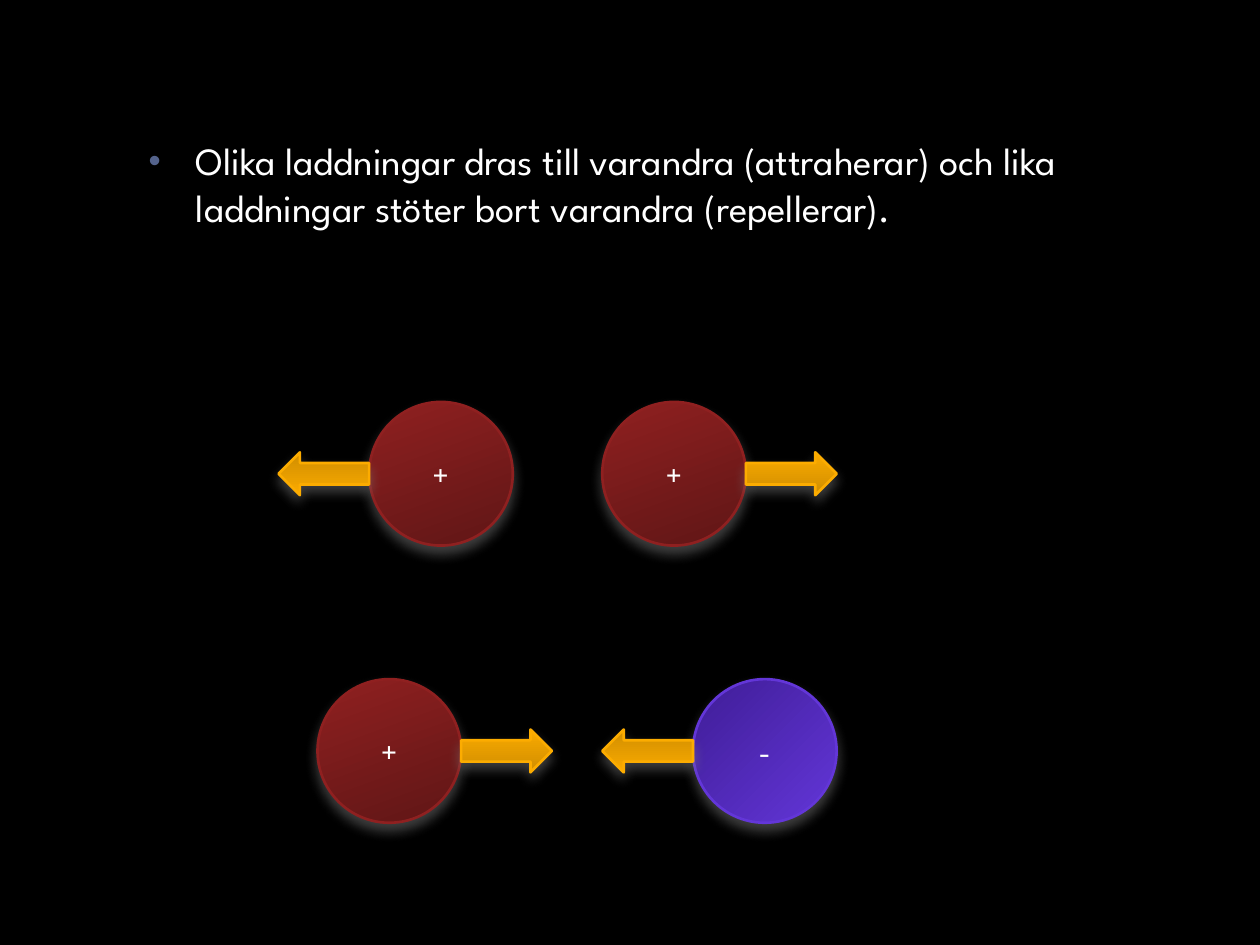
"""Build a slide on how like and unlike electric charges act on each other."""
from dataclasses import dataclass

from lxml import etree
from pptx import Presentation
from pptx.dml.color import RGBColor
from pptx.enum.shapes import MSO_SHAPE
from pptx.enum.text import MSO_ANCHOR, PP_ALIGN
from pptx.oxml.ns import qn
from pptx.util import Pt

OVAL, ARROW = MSO_SHAPE.OVAL, MSO_SHAPE.RIGHT_ARROW
CENTER, MIDDLE, TOP = PP_ALIGN.CENTER, MSO_ANCHOR.MIDDLE, MSO_ANCHOR.TOP


@dataclass(frozen=True)
class Theme:
    font: str = "League Spartan"
    body_size: int = 22
    sign_size: int = 18
    background: str = "000000"
    text: str = "FFFFFF"
    bullet: str = "54638C"
    shadow: str = "808080"
    positive: tuple = ("8F2020", "601616")
    negative: tuple = ("6336D8", "3F1D97")
    force: tuple = ("CF8D00", "FBAB00")
    positive_line: str = "8F2020"
    negative_line: str = "6336D8"
    force_line: str = "FCAC00"
    line_width: float = 1.5
    circle: float = 82.08
    arrow_width: float = 51.84
    arrow_height: float = 24.48


def add_element(parent, tag, **attributes):
    return etree.SubElement(parent, qn(tag), attributes)


class SlideBuilder:
    def __init__(self, slide, theme):
        self.slide = slide
        self.theme = theme
        slide.background.fill.solid()
        slide.background.fill.fore_color.rgb = RGBColor.from_string(theme.background)

    def style_text(self, font, size):
        formats = {"name": self.theme.font, "size": Pt(size), "bold": False}
        for name, value in formats.items():
            setattr(font, name, value)
        font.color.rgb = RGBColor.from_string(self.theme.text)

    def bullet_list(self, text, left, top, width, height):
        body = self.slide.placeholders[1]
        bounds = {"left": left, "top": top, "width": width, "height": height}
        for name, value in bounds.items():
            setattr(body, name, Pt(value))
        body.text_frame.vertical_anchor = TOP
        para = body.text_frame.paragraphs[0]
        para.space_before = Pt(0)
        properties = para._p.get_or_add_pPr()
        properties.set("marL", str(Pt(27)))
        properties.set("indent", str(Pt(-27)))
        color = add_element(properties, "a:buClr")
        add_element(color, "a:srgbClr", val=self.theme.bullet)
        add_element(properties, "a:buSzPct", val="90000")
        add_element(properties, "a:buFont", typeface="Arial")
        add_element(properties, "a:buChar", char="•")
        span = para.add_run()
        span.text = text
        self.style_text(span.font, self.theme.body_size)

    def glossy_shape(self, group, kind, bounds, colors, line, angle):
        shape = group.shapes.add_shape(kind, *map(Pt, bounds))
        shape.fill.gradient()
        for stop, color in zip(shape.fill.gradient_stops, colors):
            stop.color.rgb = RGBColor.from_string(color)
        for stop, position in zip(shape.fill.gradient_stops, (0, 1)):
            stop.position = position
        if angle is None:
            gradient = shape._element.spPr.find(qn("a:gradFill"))
            gradient.remove(gradient.find(qn("a:lin")))
            circle = add_element(gradient, "a:path", path="circle")
            add_element(circle, "a:fillToRect", l="100000", t="100000")
        else:
            shape.fill.gradient_angle = angle
        shape.line.color.rgb = RGBColor.from_string(line)
        shape.line.width = Pt(self.theme.line_width)
        self.soft_shadow(shape)
        return shape

    def soft_shadow(self, shape):
        shape.shadow.inherit = False
        effects = shape._element.spPr.find(qn("a:effectLst"))
        shadow = add_element(effects, "a:outerShdw", blurRad=str(Pt(7)),
                             dist=str(Pt(4)), dir="5400000", rotWithShape="0")
        color = add_element(shadow, "a:srgbClr", val=self.theme.shadow)
        add_element(color, "a:alpha", val="50000")

    def charge(self, group, sign, left, top):
        theme = self.theme
        looks = {"+": (theme.positive, theme.positive_line, 290),
                 "-": (theme.negative, theme.negative_line, None)}
        bounds = (left, top, theme.circle, theme.circle)
        circle = self.glossy_shape(group, OVAL, bounds, *looks[sign])
        circle.text_frame.vertical_anchor = MIDDLE
        para = circle.text_frame.paragraphs[0]
        para.alignment = CENTER
        span = para.add_run()
        span.text = sign
        self.style_text(span.font, theme.sign_size)

    def force(self, group, points_left, charge_left, charge_top):
        theme = self.theme
        left = charge_left + (-theme.arrow_width if points_left else theme.circle)
        top = charge_top + (theme.circle - theme.arrow_height) / 2
        bounds = (left, top, theme.arrow_width, theme.arrow_height)
        arrow = self.glossy_shape(group, ARROW, bounds, theme.force, theme.force_line, 90)
        arrow.rotation = 180 if points_left else 0

    def charge_pair(self, top, charges):
        group = self.slide.shapes.add_group_shape()
        for sign, left, points_left in charges:
            self.charge(group, sign, left, top)
            self.force(group, points_left, left, top)


def main():
    deck = Presentation()
    deck.slide_width, deck.slide_height = Pt(720), Pt(540)
    page = deck.slides.add_slide(deck.slide_layouts[1])
    title = page.shapes.title._element
    title.getparent().remove(title)
    builder = SlideBuilder(page, Theme())
    builder.bullet_list(
        "Olika laddningar dras till varandra (attraherar) och lika "
        "laddningar stöter bort varandra (repellerar).",
        77.76, 74.88, 564.48, 102.96)
    builder.charge_pair(229.68, [("+", 210.96, True), ("+", 344.16, False)])
    builder.charge_pair(388.08, [("+", 181.44, False), ("-", 396, True)])
    deck.save("out.pptx")


if __name__ == "__main__":
    main()
